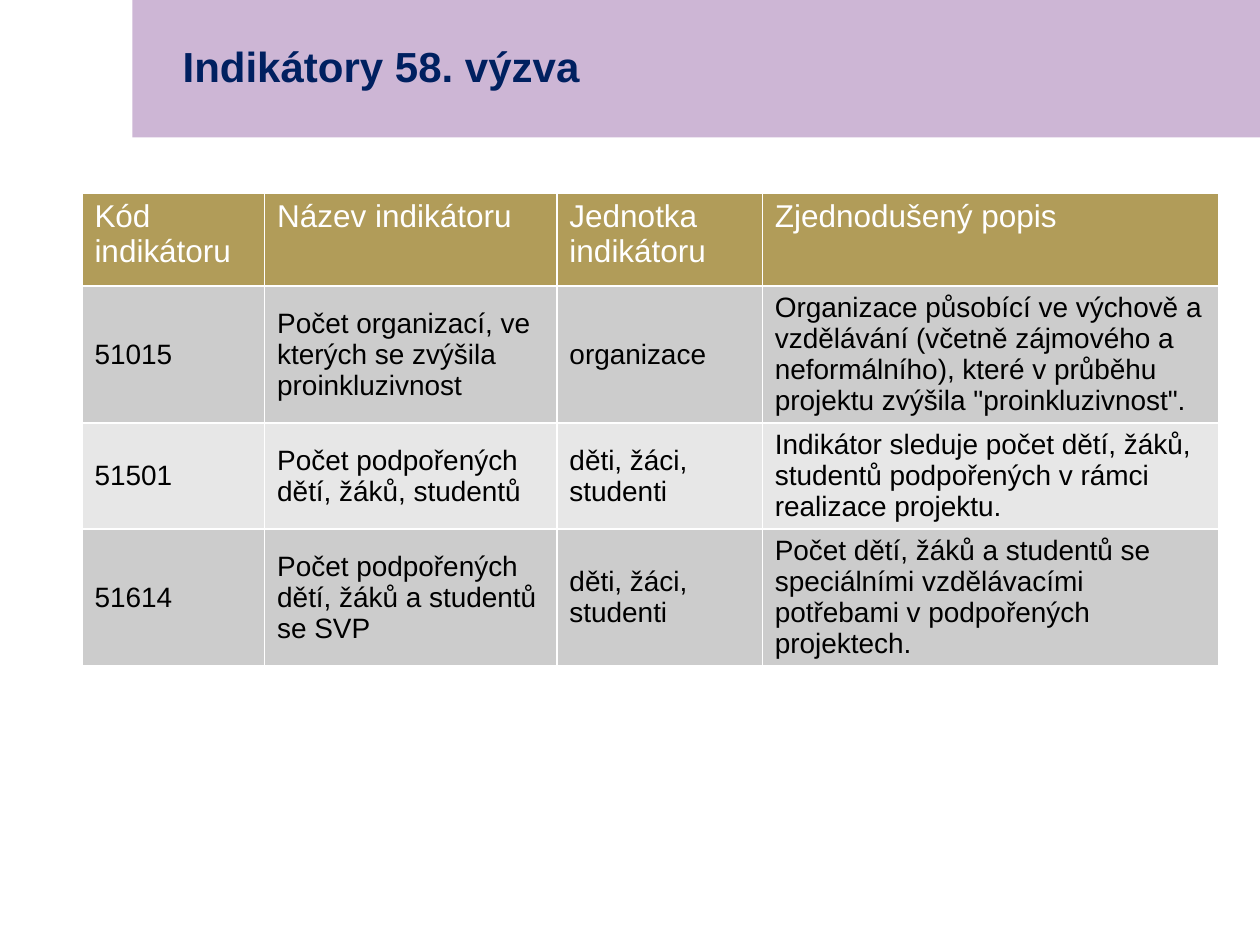
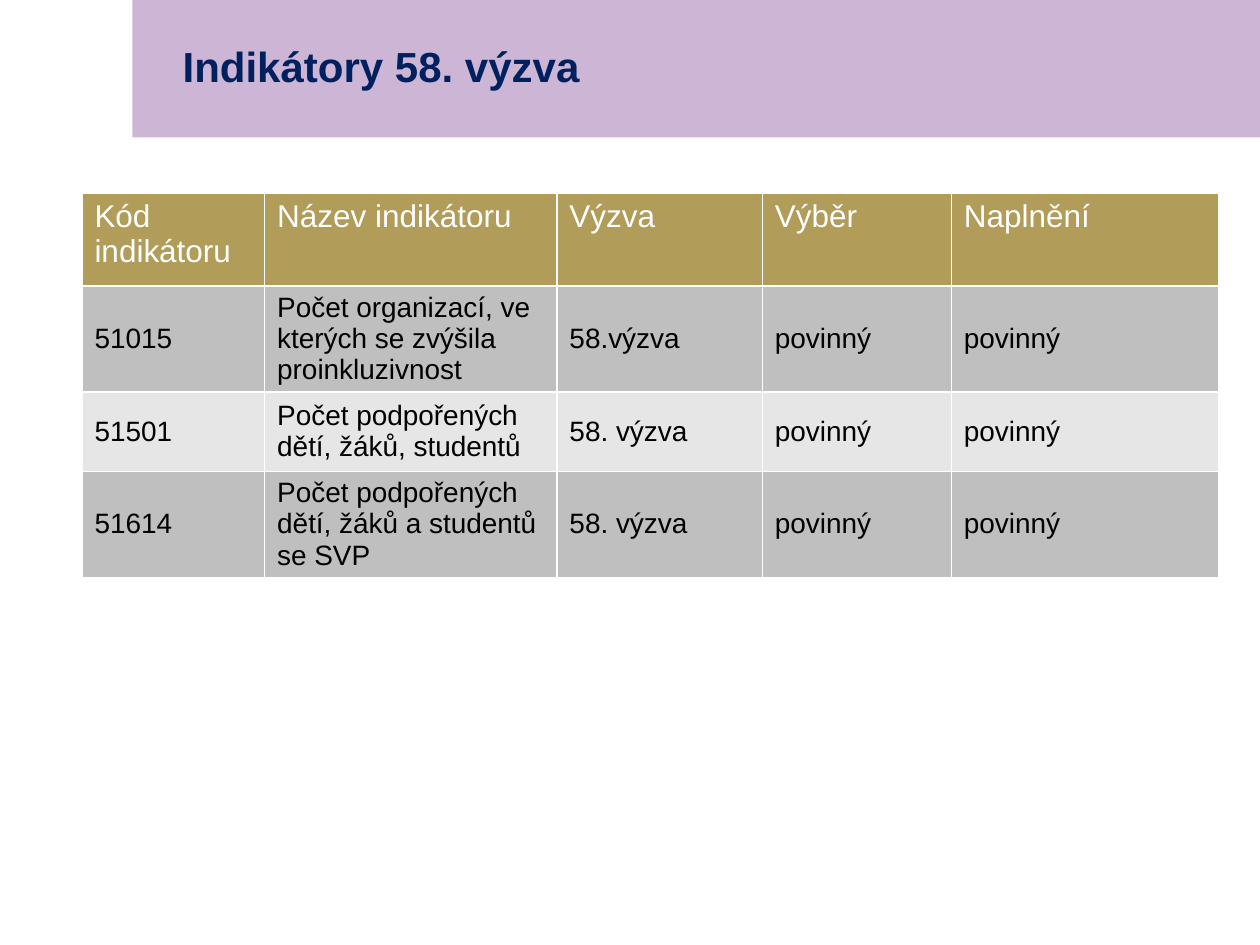
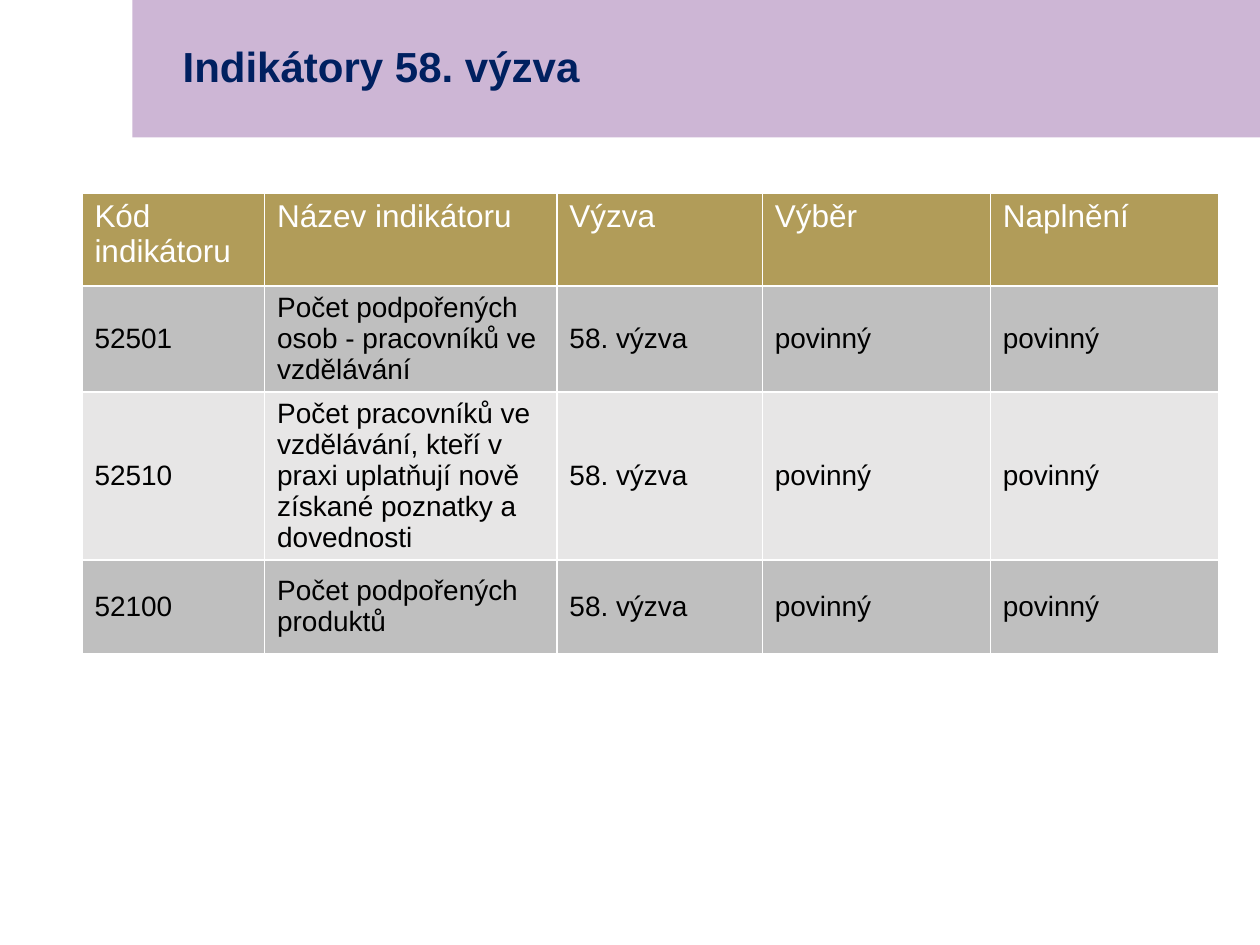
from pptx import Presentation
from pptx import util as u
from pptx.dml.color import RGBColor
from pptx.enum import shapes, text

THEME = {
    "font": "Arial",
    "band": RGBColor.from_string("CDB6D5"),
    "header": RGBColor.from_string("B19C59"),
    "title_font": {"name": "Arial", "size": u.Pt(24), "bold": True},
    "title_color": RGBColor.from_string("002060"),
    "header_font": {"name": "Arial", "size": u.Pt(18), "bold": False},
    "header_color": RGBColor.from_string("FFFFFF"),
    "body_font": {"name": "Arial", "size": u.Pt(16), "bold": False},
    "body_color": RGBColor.from_string("000000"),
    "light_stripes": [RGBColor.from_string(c) for c in ("CCCCCC", "E7E7E7")],
    "dark_stripes": [RGBColor.from_string(c) for c in ("BFBFBF", "E7E6E6")],
}
TITLE = "Indikátory 58. výzva"
DESCRIPTION = "Zjednodušený popis"
SHARED_WIDTHS = [1.45, 2.32, 1.63]
CALL_HEADERS = ["Kód indikátoru", "Název indikátoru", "Výzva", "Výběr", "Naplnění"]
ORGANIZATIONS = "Počet organizací, ve kterých se zvýšila proinkluzivnost"
CHILDREN = "Počet podpořených dětí, žáků, studentů"
CHILDREN_SVP = "Počet podpořených dětí, žáků a studentů se SVP"
REQUIRED = ["58. výzva", "povinný", "povinný"]

INDICATOR_TABLES = [
    {
        "widths": SHARED_WIDTHS + [3.62],
        "heights": [0.74] * 4,
        "stripes": THEME["light_stripes"],
        "rows": [
            ["Kód indikátoru", "Název indikátoru", "Jednotka indikátoru", DESCRIPTION],
            ["51015", ORGANIZATIONS, "organizace",
             "Organizace působící ve výchově a vzdělávání (včetně zájmového a "
             "neformálního), které v průběhu projektu zvýšila \"proinkluzivnost\"."],
            ["51501", CHILDREN, "děti, žáci, studenti",
             "Indikátor sleduje počet dětí, žáků, studentů podpořených v rámci "
             "realizace projektu."],
            ["51614", CHILDREN_SVP, "děti, žáci, studenti",
             "Počet dětí, žáků a studentů se speciálními vzdělávacími potřebami "
             "v podpořených projektech."],
        ],
    },
    {
        "widths": SHARED_WIDTHS + [1.5, 2.12],
        "heights": [0.74, 0.63, 0.63, 0.61],
        "stripes": THEME["dark_stripes"],
        "rows": [
            CALL_HEADERS,
            ["51015", ORGANIZATIONS, "58.výzva", "povinný", "povinný"],
            ["51501", CHILDREN] + REQUIRED,
            ["51614", CHILDREN_SVP] + REQUIRED,
        ],
    },
    {
        "widths": SHARED_WIDTHS + [1.81, 1.81],
        "heights": [0.74, 0.54, 0.57, 0.74],
        "stripes": THEME["dark_stripes"],
        "rows": [
            CALL_HEADERS,
            ["52501", "Počet podpořených osob - pracovníků ve vzdělávání"] + REQUIRED,
            ["52510", "Počet pracovníků ve vzdělávání, kteří v praxi uplatňují nově "
             "získané poznatky a dovednosti"] + REQUIRED,
            ["52100", "Počet podpořených produktů"] + REQUIRED,
        ],
    },
]


def write(frame, content, font, color):
    frame.text = content
    span = frame.paragraphs[0].runs[0]
    for name, value in font.items():
        setattr(span.font, name, value)
    span.font.color.rgb = color


deck = Presentation()
deck.slide_width, deck.slide_height = u.Inches(10), u.Inches(7.5)
layout = deck.slide_layouts[5]
pages = [deck.slides.add_slide(layout) for _ in INDICATOR_TABLES]

band = pages[0].shapes.add_shape(
    shapes.MSO_SHAPE.RECTANGLE, u.Inches(1.05), 0, u.Inches(8.95), u.Inches(1.09))
band.shadow.inherit = False
band.fill.solid()
band.fill.fore_color.rgb = THEME["band"]
band.line.fill.background()
band.element.nvSpPr.cNvPr.set("id", "20")
layout.shapes.element.insert(2, band.element)

for page, indicators in zip(pages, INDICATOR_TABLES):
    title = page.shapes.title
    title.left, title.top = u.Inches(1.35), 0
    title.width, title.height = u.Inches(8.35), u.Inches(1.09)
    write(title.text_frame, TITLE, THEME["title_font"], THEME["title_color"])
    title.text_frame.auto_size = text.MSO_AUTO_SIZE.NONE
    title.text_frame.vertical_anchor = text.MSO_ANCHOR.MIDDLE
    para = title.text_frame.paragraphs[0]
    para.alignment = text.PP_ALIGN.LEFT
    para.line_spacing = 0.9

    rows, widths, heights = (indicators[key] for key in ("rows", "widths", "heights"))
    table = page.shapes.add_table(
        len(rows), len(widths), u.Inches(0.65), u.Inches(1.53),
        u.Inches(sum(widths)), u.Inches(sum(heights))).table
    for column, width in zip(table.columns, widths):
        column.width = u.Inches(width)
    for row, height in zip(table.rows, heights):
        row.height = u.Inches(height)

    for row_index, values in enumerate(rows):
        is_header = row_index == 0
        style = "header" if is_header else "body"
        fill = THEME["header"] if is_header else indicators["stripes"][(row_index - 1) % 2]
        for column_index, value in enumerate(values):
            cell = table.cell(row_index, column_index)
            cell.fill.solid()
            cell.fill.fore_color.rgb = fill
            at_top = is_header or rows[0][column_index] == DESCRIPTION
            cell.vertical_anchor = text.MSO_ANCHOR.TOP if at_top else text.MSO_ANCHOR.MIDDLE
            write(cell.text_frame, value, THEME[style + "_font"], THEME[style + "_color"])

deck.save("out.pptx")
